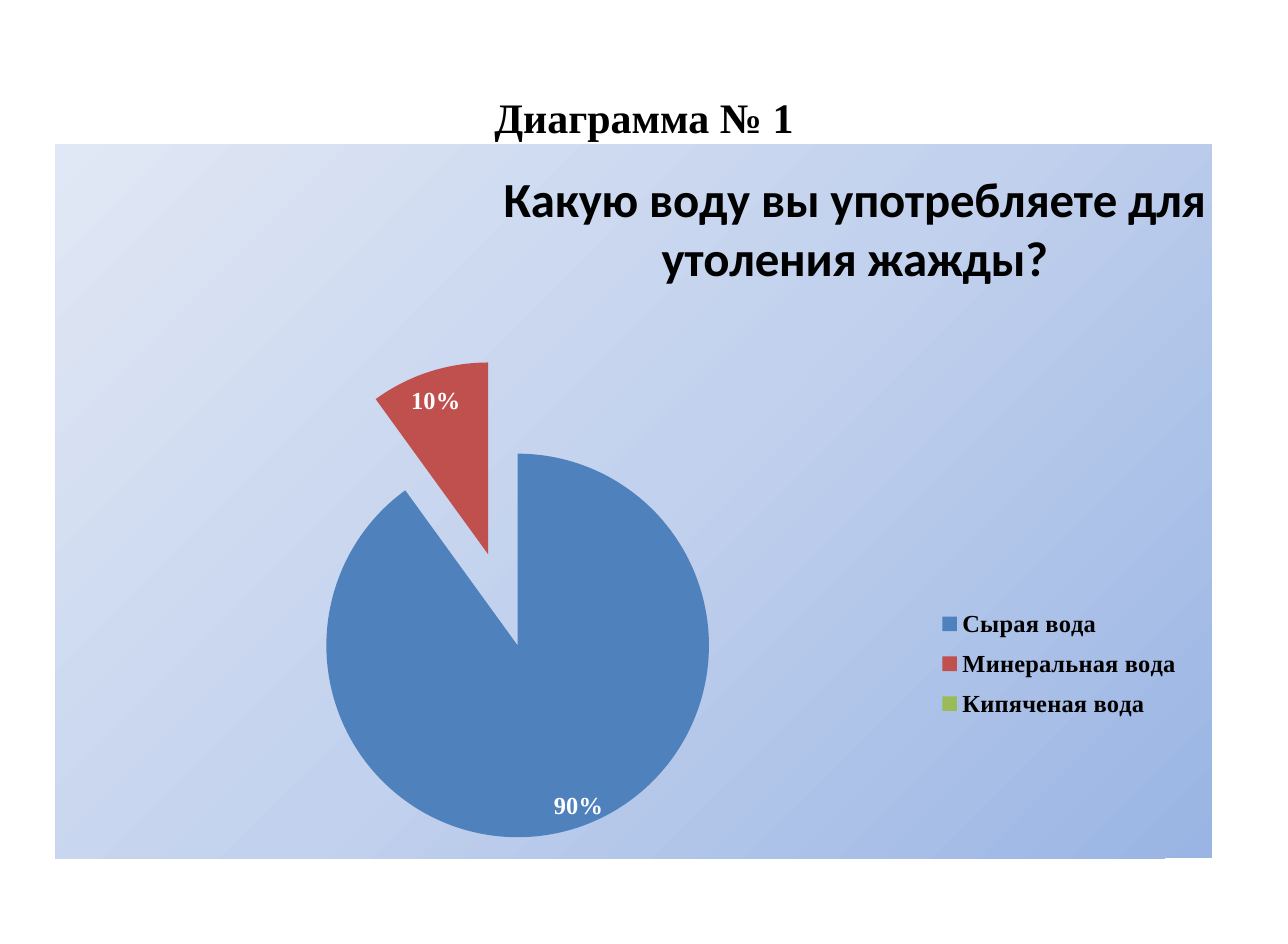
from dataclasses import dataclass

from lxml import etree
from pptx import Presentation
from pptx import util as u
from pptx.chart import data as chart_data
from pptx.dml import color
from pptx.enum import chart as ch, text
from pptx.oxml import ns


@dataclass(frozen=True)
class Theme:
    ink: str = "000000"
    label_ink: str = "FFFFFF"
    slices: tuple = ("4F81BD", "C0504D", "9BBB59")
    backdrop: tuple = ((0, "9AB5E4"), (50, "C2D1ED"), (100, "E1E8F5"))
    backdrop_angle: int = 225
    serif: str = "Times New Roman"
    sans: str = "Calibri"
    heading_size: int = 24
    question_size: int = 28
    base_size: int = 10
    detail_size: int = 14


LABEL_SHIFTS = ((2.5, -0.2), (-1.75, 1.2))


def apply(target, **values):
    for name, value in values.items():
        setattr(target, name, value)


def add_node(parent, tag, **attributes):
    return etree.SubElement(parent, ns.qn(tag), attributes)


def layout_node(inner=False, edge=True, **percents):
    layout = etree.Element(ns.qn("c:layout"))
    manual = add_node(layout, "c:manualLayout")
    if inner:
        add_node(manual, "c:layoutTarget", val="inner")
    for axis in ("x", "y") if edge else ():
        add_node(manual, f"c:{axis}Mode", val="edge")
    for name, value in percents.items():
        add_node(manual, f"c:{name}", val=str(round(value / 100, 4)))
    return layout


def place(element, before, **percents):
    for old in element.findall(ns.qn("c:layout")):
        element.remove(old)
    element.find(ns.qn(before)).addprevious(layout_node(**percents))


class SurveySlide:
    def __init__(self, deck, theme):
        self.theme = theme
        self.slide = deck.slides.add_slide(deck.slide_layouts[5])

    def style(self, font, size, face, ink=None, bold=True):
        apply(font, size=u.Pt(size), name=face, bold=bold)
        font.color.rgb = color.RGBColor.from_string(ink or self.theme.ink)

    def heading(self, words, left, top, width, height):
        heading = self.slide.shapes.title
        apply(heading, left=u.Pt(left), top=u.Pt(top), width=u.Pt(width), height=u.Pt(height))
        frame = heading.text_frame
        apply(frame, text=words, vertical_anchor=text.MSO_ANCHOR.MIDDLE, word_wrap=True)
        line = frame.paragraphs[0]
        line.alignment = text.PP_ALIGN.CENTER
        self.style(line.runs[0].font, self.theme.heading_size, self.theme.serif)

    def pie(self, question, answers, left, top, width, height):
        survey = chart_data.CategoryChartData()
        survey.categories = list(answers)
        survey.add_series(question, list(answers.values()))
        pie = self.slide.shapes.add_chart(
            ch.XL_CHART_TYPE.PIE, *map(u.Pt, (left, top, width, height)), survey
        ).chart
        self.style(pie.font, self.theme.base_size, self.theme.sans, bold=False)
        self.question(pie, question)
        self.legend(pie)
        self.slices(pie.plots[0])
        self.labels(pie.plots[0].series[0])
        self.backdrop(pie)
        plot_area = pie.plots[0]._element.getparent()
        place(plot_area, "c:pieChart", inner=True, x=18, y=30.2, w=41.4, h=67.2)

    def question(self, pie, words):
        pie.has_title = True
        title = pie.chart_title
        title.include_in_layout = False
        title.text_frame.text = words
        run = title.text_frame.paragraphs[0].runs[0]
        self.style(run.font, self.theme.question_size, self.theme.sans)
        place(title._element, "c:overlay", x=38, y=1.75)

    def legend(self, pie):
        pie.has_legend = True
        apply(pie.legend, position=ch.XL_LEGEND_POSITION.RIGHT, include_in_layout=False)
        self.style(pie.legend.font, self.theme.detail_size, self.theme.serif)
        place(pie.legend._element, "c:overlay", x=75.3, y=63.5, w=23, h=18.5)

    def slices(self, plot):
        plot.vary_by_categories = True
        answers = plot.series[0]
        explosion = etree.Element(ns.qn("c:explosion"), val="25")
        answers._element.find(ns.qn("c:tx")).addnext(explosion)
        for index, shade in enumerate(self.theme.slices):
            fill = answers.points[index].format.fill
            fill.solid()
            fill.fore_color.rgb = color.RGBColor.from_string(shade)

    def labels(self, answers):
        labels = answers.data_labels
        apply(
            labels,
            show_percentage=True,
            show_value=False,
            number_format="0%;;",
            number_format_is_linked=False,
            position=ch.XL_LABEL_POSITION.INSIDE_END,
        )
        look = (self.theme.detail_size, self.theme.serif, self.theme.label_ink)
        self.style(labels.font, *look)
        for index, (across, down) in enumerate(LABEL_SHIFTS):
            label = answers.points[index].data_label
            self.style(label.font, *look)
            label.position = ch.XL_LABEL_POSITION.INSIDE_END
        for node, (across, down) in zip(labels._element.findall(ns.qn("c:dLbl")), LABEL_SHIFTS):
            node.find(ns.qn("c:showVal")).set("val", "0")
            node.find(ns.qn("c:showPercent")).set("val", "1")
            shift = layout_node(edge=False, x=across, y=down)
            node.find(ns.qn("c:idx")).addnext(shift)

    def backdrop(self, pie):
        properties = etree.Element(ns.qn("c:spPr"))
        gradient = add_node(properties, "a:gradFill")
        stops = add_node(gradient, "a:gsLst")
        for percent, shade in self.theme.backdrop:
            stop = add_node(stops, "a:gs", pos=str(percent * 1000))
            add_node(stop, "a:srgbClr", val=shade)
        add_node(gradient, "a:lin", ang=str(self.theme.backdrop_angle * 60000), scaled="0")
        add_node(add_node(properties, "a:ln"), "a:noFill")
        pie._chartSpace.find(ns.qn("c:chart")).addnext(properties)


def main():
    deck = Presentation()
    deck.slide_width = u.Pt(737.13)
    deck.slide_height = u.Pt(540)
    survey = SurveySlide(deck, Theme())
    survey.heading("Диаграмма № 1", 36.85, 21.6, 663.4, 90)
    survey.pie(
        "Какую воду вы употребляете для утоления жажды?",
        {"Сырая вода": 90, "Минеральная вода": 10, "Кипяченая вода": 0},
        31.7, 82.8, 663.4, 408.2,
    )
    deck.save("out.pptx")


if __name__ == "__main__":
    main()
